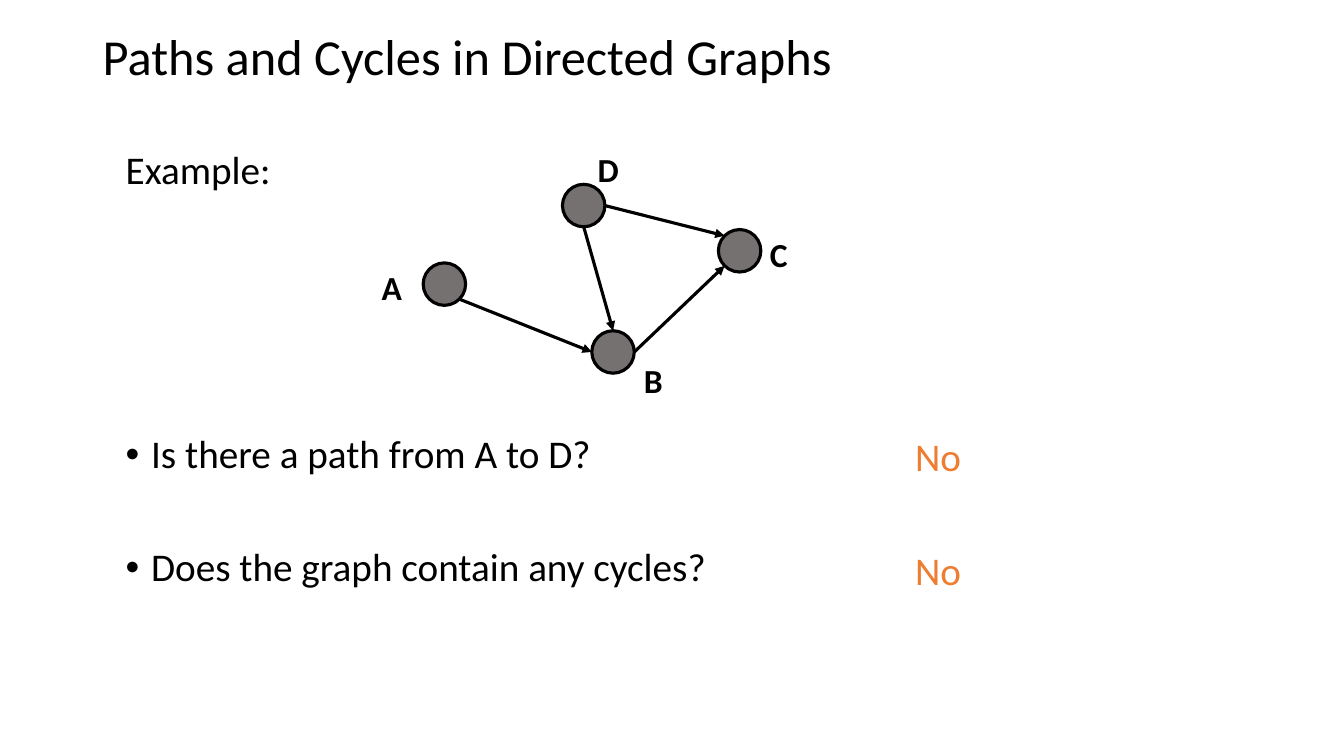
from math import cos, radians, sin
from lxml.etree import SubElement
from pptx import Presentation
from pptx.dml.color import RGBColor as Rgb
from pptx.enum.shapes import MSO_CONNECTOR as Link, MSO_SHAPE as Kind
from pptx.enum.text import MSO_ANCHOR as Anchor
from pptx.oxml.ns import qn
from pptx.util import Cm, Pt


def paint(code):
    return Rgb.from_string(code)


def write(lines, left, top, width, height, size=28, color="000000", bold=False,
          wrap=True, anchor=Anchor.TOP, pitch=0.9, gaps=(0,), dots=()):
    box = slide.shapes.add_textbox(Cm(left), Cm(top), Cm(width), Cm(height))
    frame = box.text_frame
    frame.word_wrap = wrap
    frame.vertical_anchor = anchor
    for i, line in enumerate(lines):
        para = frame.paragraphs[0] if i == 0 else frame.add_paragraph()
        para.line_spacing = pitch
        para.space_before = Pt(gaps[i])
        if i in dots:
            props = para._p.get_or_add_pPr()
            props.set("marL", str(Cm(0.64)))
            props.set("indent", str(Cm(-0.64)))
            SubElement(props, qn("a:buFont")).set("typeface", "Arial")
            SubElement(props, qn("a:buChar")).set("char", "•")
        run = para.add_run()
        run.text = line
        font = run.font
        font.name, font.size, font.bold = "Calibri", Pt(size), bold
        font.color.rgb = paint(color)


deck = Presentation()
deck.slide_width, deck.slide_height = Cm(33.87), Cm(19.05)
slide = deck.slides.add_slide(deck.slide_layouts[6])

write(["Paths and Cycles in Directed Graphs"], 2.34, 0.38, 29.21, 2.24,
      size=36, anchor=Anchor.MIDDLE)
write(["Example:", "Is there a path from A to D?",
       "Does the graph contain any cycles?"],
      2.92, 3.66, 20.12, 14.48, gaps=(0, 173, 50.75), dots=(1, 2))
write(["No", "No"], 22.81, 10.91, 2.97, 4, color="ED7D31", gaps=(0, 50.75))

size = 1.07
nodes = {"A": (11.2, 7.16), "B": (15.45, 8.87),
         "C": (18.64, 6.32), "D": (14.71, 5.18)}
tags = {"A": (9.37, 6.6), "B": (15.98, 8.94),
        "C": (19.15, 5.77), "D": (14.81, 3.63)}
for name, (x, y) in nodes.items():
    node = slide.shapes.add_shape(Kind.OVAL, Cm(x - size / 2), Cm(y - size / 2),
                                  Cm(size), Cm(size))
    node.shadow.inherit = False
    node.fill.solid()
    node.fill.fore_color.rgb = paint("767171")
    node.line.color.rgb = paint("000000")
    node.line.width = Pt(2.25)
    write([name], *tags[name], 1.02, 1.27, size=24, bold=True, wrap=False, pitch=1)

edges = [("A", 45, "B", 180), ("B", 0, "C", 135),
         ("D", 0, "C", 225), ("D", 90, "B", 270)]
for start, out, end, into in edges:
    ends = []
    for name, turn in ((start, out), (end, into)):
        x, y = nodes[name]
        ends += [Cm(x + size / 2 * cos(radians(turn))),
                 Cm(y + size / 2 * sin(radians(turn)))]
    edge = slide.shapes.add_connector(Link.STRAIGHT, *ends)
    edge.line.color.rgb = paint("000000")
    edge.line.width = Pt(2.25)
    SubElement(edge.line._get_or_add_ln(), qn("a:tailEnd")).set("type", "triangle")
    SubElement(edge._element.spPr, qn("a:effectLst"))

deck.save("out.pptx")
